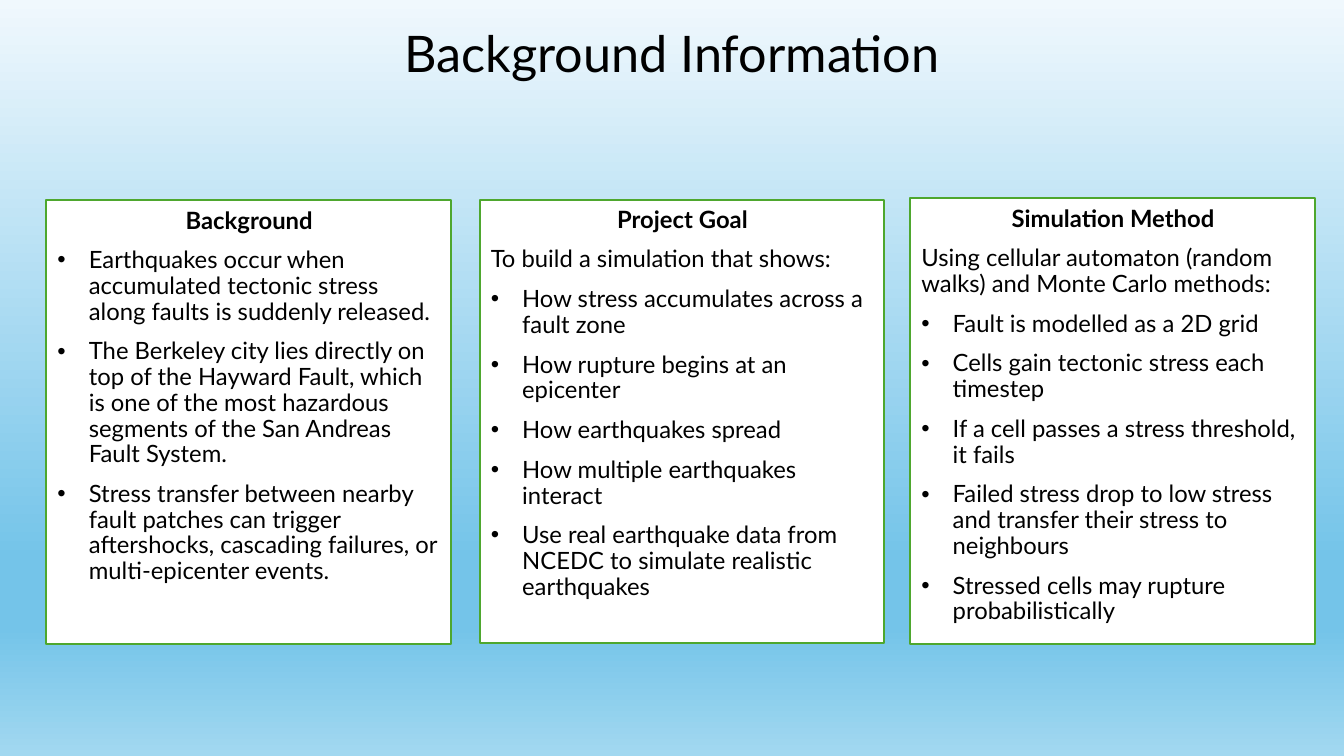
from copy import deepcopy

from lxml import etree
from pptx import Presentation
from pptx.dml.color import RGBColor
from pptx.enum.shapes import MSO_SHAPE
from pptx.enum.text import MSO_ANCHOR, PP_ALIGN
from pptx.oxml.ns import qn
from pptx.util import Cm, Pt

RECTANGLE = MSO_SHAPE.RECTANGLE
TOP, BOTTOM = MSO_ANCHOR.TOP, MSO_ANCHOR.BOTTOM
LEFT, CENTER = PP_ALIGN.LEFT, PP_ALIGN.CENTER

COLORS = {"text": "000000", "card": "FFFFFF", "border": "4EA72E"}
SKY = [(0, "F0F8FD"), (74, "74C4E9"), (83, "74C4E9"), (100, "A2D8F0")]

# left, top, card height, text height (cm), heading, lead-in, bullets
CARDS = [
    (1.17, 5.05, 11.18, 8.43, "Background", None, [
        "Earthquakes occur when accumulated tectonic stress along faults is suddenly released.",
        "The Berkeley city lies directly on top of the Hayward Fault, which is one of the most "
        "hazardous segments of the San Andreas Fault System.",
        "Stress transfer between nearby fault patches can trigger aftershocks, cascading "
        "failures, or multi-epicenter events.",
    ]),
    (12.09, 5.03, 11.18, 11.25, "Project Goal", "To build a simulation that shows:", [
        "How stress accumulates across a fault zone",
        "How rupture begins at an epicenter",
        "How earthquakes spread",
        "How multiple earthquakes interact",
        "Use real earthquake data from NCEDC to simulate realistic earthquakes",
    ]),
    (22.94, 5, 11.23, 8.43, "Simulation Method",
     "Using cellular automaton (random walks) and Monte Carlo methods:", [
         "Fault is modelled as a 2D grid",
         "Cells gain tectonic stress each timestep",
         "If a cell passes a stress threshold, it fails",
         "Failed stress drop to low stress and transfer their stress to neighbours",
         "Stressed cells may rupture probabilistically",
     ]),
]


class SlideBuilder:
    FONT = "Lato"
    TITLE_SIZE, BODY_SIZE = 36, 17
    CARD_WIDTH, TEXT_WIDTH = 10.19, 10.16
    INDENT = 0.79

    def __init__(self, slide):
        self.slide = slide

    def background(self, stops):
        fill = self.slide.background.fill
        fill.gradient()
        fill.gradient_angle = 270
        stop_list = next(self.slide.element.iter(qn("a:gsLst")))
        while len(stop_list) < len(stops):
            stop_list.append(deepcopy(stop_list[0]))
        for stop, (position, color) in zip(fill.gradient_stops, stops):
            stop.position = position / 100
            stop.color.rgb = RGBColor.from_string(color)

    def panel(self, left, top, height):
        panel = self.slide.shapes.add_shape(
            RECTANGLE, Cm(left), Cm(top), Cm(self.CARD_WIDTH), Cm(height))
        panel.shadow.inherit = False
        panel.fill.solid()
        panel.fill.fore_color.rgb = RGBColor.from_string(COLORS["card"])
        panel.line.color.rgb = RGBColor.from_string(COLORS["border"])
        panel.line.width = Pt(1.5)

    def text_frame(self, left, top, width, height, anchor=TOP):
        frame = self.slide.shapes.add_textbox(
            Cm(left), Cm(top), Cm(width), Cm(height)).text_frame
        frame.word_wrap = True
        frame.vertical_anchor = anchor
        return frame

    def set_text(self, paragraph, text, size, align=LEFT, bold=False):
        paragraph.text = text
        paragraph.alignment = align
        paragraph.line_spacing = 0.9
        for run in paragraph.runs:
            run.font.name = self.FONT
            run.font.size = Pt(size)
            run.font.bold = bold
            run.font.color.rgb = RGBColor.from_string(COLORS["text"])

    def body(self, frame, text, bulleted=False):
        paragraph = frame.add_paragraph()
        self.set_text(paragraph, text, self.BODY_SIZE)
        paragraph.space_before = Pt(10)
        if bulleted:
            properties = paragraph._p.get_or_add_pPr()
            properties.set("marL", str(Cm(self.INDENT)))
            properties.set("indent", str(-Cm(self.INDENT)))
            etree.SubElement(properties, qn("a:buFont"), typeface="Arial")
            etree.SubElement(properties, qn("a:buChar"), char="•")

    def title(self, text):
        frame = self.text_frame(1.68, 0.48, 30.51, 1.75, BOTTOM)
        self.set_text(frame.paragraphs[0], text, self.TITLE_SIZE, CENTER)

    def card(self, left, top, height, text_height, heading, lead_in, bullets):
        self.panel(left, top, height)
        frame = self.text_frame(left + 0.03, top + 0.08, self.TEXT_WIDTH, text_height)
        self.set_text(frame.paragraphs[0], heading, self.BODY_SIZE, CENTER, bold=True)
        if lead_in:
            self.body(frame, lead_in)
        for bullet in bullets:
            self.body(frame, bullet, bulleted=True)


def main():
    presentation = Presentation()
    presentation.slide_width, presentation.slide_height = Cm(33.87), Cm(19.05)
    builder = SlideBuilder(presentation.slides.add_slide(presentation.slide_layouts[6]))
    builder.background(SKY)
    builder.title("Background Information")
    for card in CARDS:
        builder.card(*card)
    presentation.save("out.pptx")


if __name__ == "__main__":
    main()
